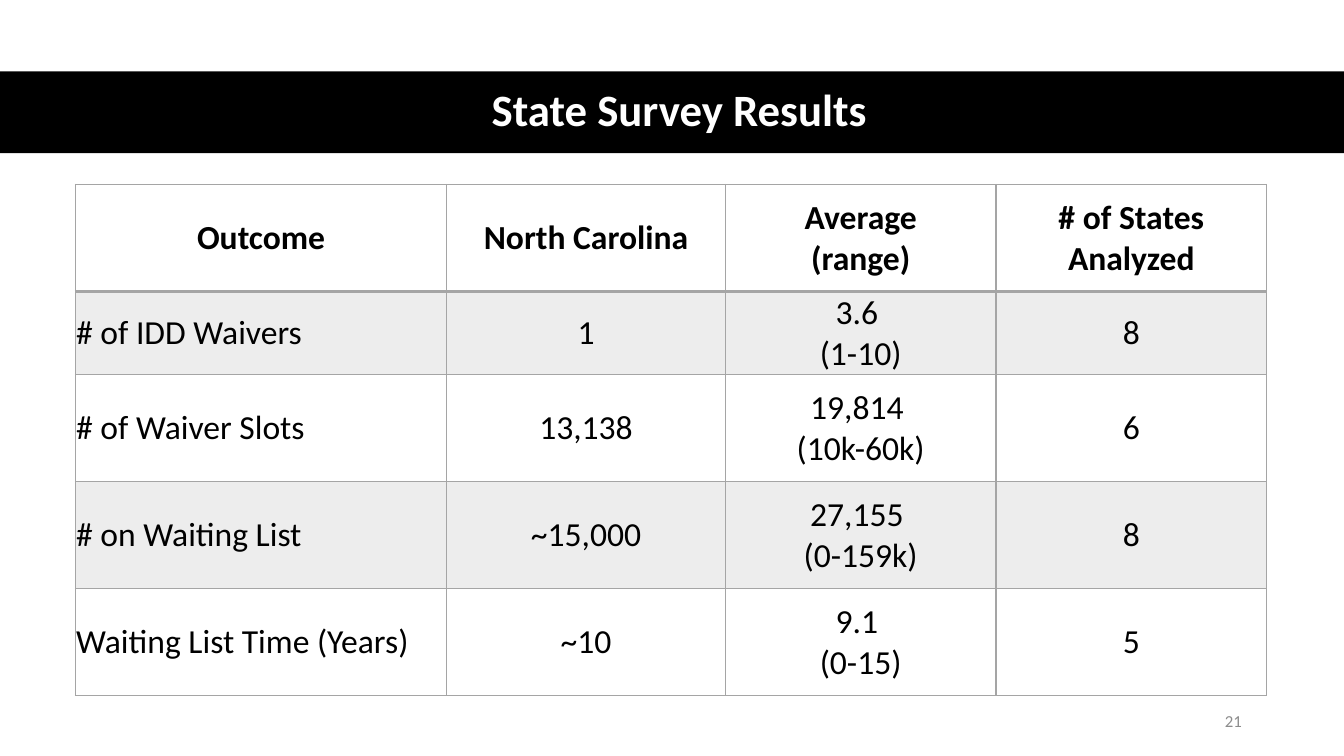
from lxml import etree
from pptx import Presentation
from pptx.dml.color import RGBColor
from pptx.enum.shapes import MSO_SHAPE
from pptx.enum.text import MSO_ANCHOR, PP_ALIGN
from pptx.oxml.ns import qn
from pptx.util import Cm, Pt

RECTANGLE = MSO_SHAPE.RECTANGLE
MIDDLE = MSO_ANCHOR.MIDDLE
LEFT, CENTER, RIGHT = PP_ALIGN.LEFT, PP_ALIGN.CENTER, PP_ALIGN.RIGHT

FONT = "Calibri"
COLORS = {"black": "000000", "white": "FFFFFF", "gray": "A5A5A5", "number": "8C8C8C"}
TITLE_ONLY = 5
SLIDE_WIDTH, SLIDE_HEIGHT = 33.87, 19.05

COLUMN_WIDTHS = [9.36, 7.02, 6.82, 6.82]
ROW_HEIGHTS = [2.7, 2.08, 2.7, 2.7, 2.7]
SURVEY_ROWS = [
    ["Outcome", "North Carolina", "Average\n(range)", "# of States Analyzed"],
    ["# of IDD Waivers", "1", "3.6 \n(1-10)", "8"],
    ["# of Waiver Slots", "13,138", "19,814 \n(10k-60k)", "6"],
    ["# on Waiting List", "~15,000", "27,155 \n(0-159k)", "8"],
    ["Waiting List Time (Years)", "~10", "9.1 \n(0-15)", "5"],
]


class SlideBuilder:
    """Holds the current slide and the style shared by its elements."""

    def __init__(self, presentation):
        self.slide = presentation.slides.add_slide(presentation.slide_layouts[TITLE_ONLY])

    def color(self, name):
        return RGBColor.from_string(COLORS[name])

    def set_text(self, text_frame, text, size, color, alignment, bold=False, space_after=0):
        text_frame.text = text
        text_frame.word_wrap = True
        text_frame.vertical_anchor = MIDDLE
        for paragraph in text_frame.paragraphs:
            paragraph.alignment = alignment
            paragraph.space_after = Pt(space_after)
            for run in paragraph.runs:
                run.font.name = FONT
                run.font.size = Pt(size)
                run.font.bold = bold
                run.font.color.rgb = self.color(color)

    def title(self, text, left, top, width, height):
        title = self.slide.shapes.title
        title.left, title.top = Cm(left), Cm(top)
        title.width, title.height = Cm(width), Cm(height)
        self.set_text(title.text_frame, text, 32, "white", CENTER, bold=True, space_after=6)
        title.text_frame.paragraphs[0].line_spacing = 0.9

    def title_band(self, left, top, width, height):
        """Adds the black band and puts it behind the title."""
        band = self.slide.shapes.add_shape(
            RECTANGLE, Cm(left), Cm(top), Cm(width), Cm(height))
        band.shadow.inherit = False
        band.fill.solid()
        band.fill.fore_color.rgb = self.color("black")
        band.line.fill.background()
        self.slide.shapes.title.element.addprevious(band.element)

    def page_number(self, text, left, top, width, height):
        box = self.slide.shapes.add_textbox(Cm(left), Cm(top), Cm(width), Cm(height))
        self.set_text(box.text_frame, text, 12, "number", RIGHT, space_after=6)

    def cell_borders(self, cell, top, bottom):
        """Draws all four borders; top and bottom are widths in points."""
        properties = cell._tc.get_or_add_tcPr()
        for side, width in (("L", 1), ("R", 1), ("T", top), ("B", bottom)):
            line = etree.SubElement(properties, qn(f"a:ln{side}"), w=str(Pt(width)))
            fill = etree.SubElement(line, qn("a:solidFill"))
            etree.SubElement(fill, qn("a:srgbClr"), val=COLORS["gray"])

    def cell_fill(self, cell, shaded):
        """Tints a shaded cell with 20% gray and leaves the others clear."""
        if not shaded:
            cell.fill.background()
            return
        cell.fill.solid()
        cell.fill.fore_color.rgb = self.color("gray")
        tint = cell._tc.tcPr.find(f"{qn('a:solidFill')}/{qn('a:srgbClr')}")
        etree.SubElement(tint, qn("a:alpha"), val="20000")

    def table(self, rows, left, top, column_widths, row_heights):
        table = self.slide.shapes.add_table(
            len(rows), len(column_widths), Cm(left), Cm(top),
            Cm(sum(column_widths)), Cm(sum(row_heights))).table
        table.first_row = table.horz_banding = False
        for column, width in zip(table.columns, column_widths):
            column.width = Cm(width)
        for row_index, texts in enumerate(rows):
            table.rows[row_index].height = Cm(row_heights[row_index])
            header = row_index == 0
            for column_index, text in enumerate(texts):
                cell = table.cell(row_index, column_index)
                cell.margin_left = cell.margin_right = cell.margin_top = Cm(0.02)
                cell.margin_bottom = 0
                cell.vertical_anchor = MIDDLE
                self.cell_borders(cell, 2 if row_index == 1 else 1, 2 if header else 1)
                self.cell_fill(cell, shaded=row_index % 2 == 1)
                alignment = CENTER if header or column_index else LEFT
                self.set_text(cell.text_frame, text, 24, "black", alignment, bold=header)


def main():
    presentation = Presentation()
    presentation.slide_width = Cm(SLIDE_WIDTH)
    presentation.slide_height = Cm(SLIDE_HEIGHT)

    builder = SlideBuilder(presentation)
    builder.title_band(0, 1.8, SLIDE_WIDTH, 2.06)
    builder.title("State Survey Results", 1.55, 1.78, 31.14, 2.06)
    builder.page_number("21", 23.93, 17.65, 7.62, 1.02)
    builder.table(SURVEY_ROWS, 1.9, 4.65, COLUMN_WIDTHS, ROW_HEIGHTS)

    presentation.save("out.pptx")


if __name__ == "__main__":
    main()
